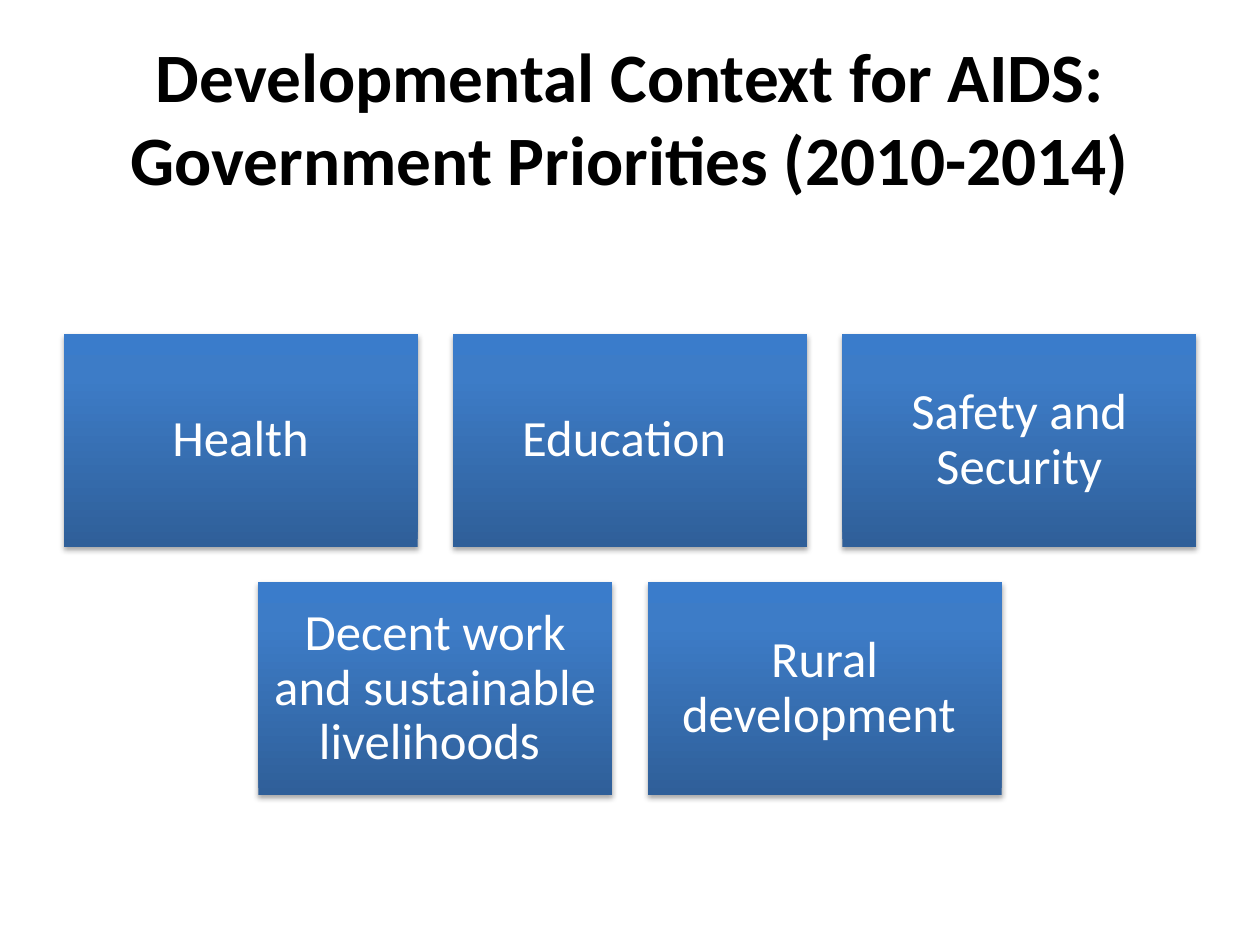
from dataclasses import dataclass

from lxml.etree import SubElement
from pptx import Presentation
from pptx.dml.color import RGBColor
from pptx.enum.shapes import MSO_SHAPE as Shape
from pptx.enum.text import MSO_ANCHOR as Anchor, PP_ALIGN as Align
from pptx.oxml.ns import qn
from pptx.util import Inches, Pt


@dataclass(frozen=True)
class Theme:
    font: str = "Calibri"
    title_size: float = 39.6
    box_size: float = 29
    title_color: str = "000000"
    box_text: str = "FFFFFF"
    shadow: str = "000000"
    gradient: tuple = ((0, "2F5F99"), (80, "3D7CC7"), (100, "3A7CCB"))


class PriorityPage:
    def __init__(self, deck, theme):
        self.theme = theme
        self.page = deck.slides.add_slide(deck.slide_layouts[6])

    def set_text(self, shape, text, size, color, bold=False):
        frame = shape.text_frame
        frame.word_wrap = True
        frame.vertical_anchor = Anchor.MIDDLE
        para = frame.paragraphs[0]
        para.text = text
        para.alignment = Align.CENTER
        para.font.name = self.theme.font
        para.font.size = Pt(size)
        para.font.bold = bold
        para.font.color.rgb = RGBColor.from_string(color)
        return frame

    def title(self, text, left, top, width, height):
        box = self.page.shapes.add_textbox(
            Inches(left), Inches(top), Inches(width), Inches(height))
        self.set_text(box, text, self.theme.title_size, self.theme.title_color, bold=True)

    def priority(self, text, left, top, width, height):
        box = self.page.shapes.add_shape(
            Shape.RECTANGLE, Inches(left), Inches(top), Inches(width), Inches(height))
        box.line.fill.background()
        self.shade(box)
        self.drop_shadow(box)
        frame = self.set_text(box, text, self.theme.box_size, self.theme.box_text)
        frame.margin_left = frame.margin_right = Inches(0.12)
        frame.margin_top = frame.margin_bottom = Inches(0.12)
        frame.paragraphs[0].line_spacing = 0.9

    def shade(self, box):
        box.fill.gradient()
        box.fill.gradient_angle = 90
        stops = next(box.element.spPr.iter(qn("a:gsLst")))
        for stop in list(stops):
            stops.remove(stop)
        for percent, color in self.theme.gradient:
            stop = SubElement(stops, qn("a:gs"), pos=str(percent * 1000))
            SubElement(stop, qn("a:srgbClr"), val=color)

    def drop_shadow(self, box):
        box.shadow.inherit = False
        effects = box.element.spPr.find(qn("a:effectLst"))
        shadow = SubElement(
            effects, qn("a:outerShdw"), blurRad=str(Pt(3.1)), dist=str(Pt(1.8)),
            dir="5400000", rotWithShape="0")
        color = SubElement(shadow, qn("a:srgbClr"), val=self.theme.shadow)
        SubElement(color, qn("a:alpha"), val="35000")


def main():
    deck = Presentation()
    deck.slide_width, deck.slide_height = Inches(10), Inches(7.5)
    page = PriorityPage(deck, Theme())

    # Heading
    page.title("Developmental Context for AIDS: Government Priorities (2010-2014)",
               0.5, 0.3, 9, 1.25)

    # Priority boxes, each row centred on the page
    rows = [
        ["Health", "Education ", "Safety and Security"],
        ["Decent work and sustainable livelihoods ", "Rural development "],
    ]
    width, height, gap, first_top = 2.81, 1.69, 0.28, 2.65
    for row, labels in enumerate(rows):
        row_width = len(labels) * (width + gap) - gap
        first_left = (10 - row_width) / 2
        top = first_top + row * (height + gap)
        for column, label in enumerate(labels):
            page.priority(label, first_left + column * (width + gap), top, width, height)

    deck.save("out.pptx")


if __name__ == "__main__":
    main()
